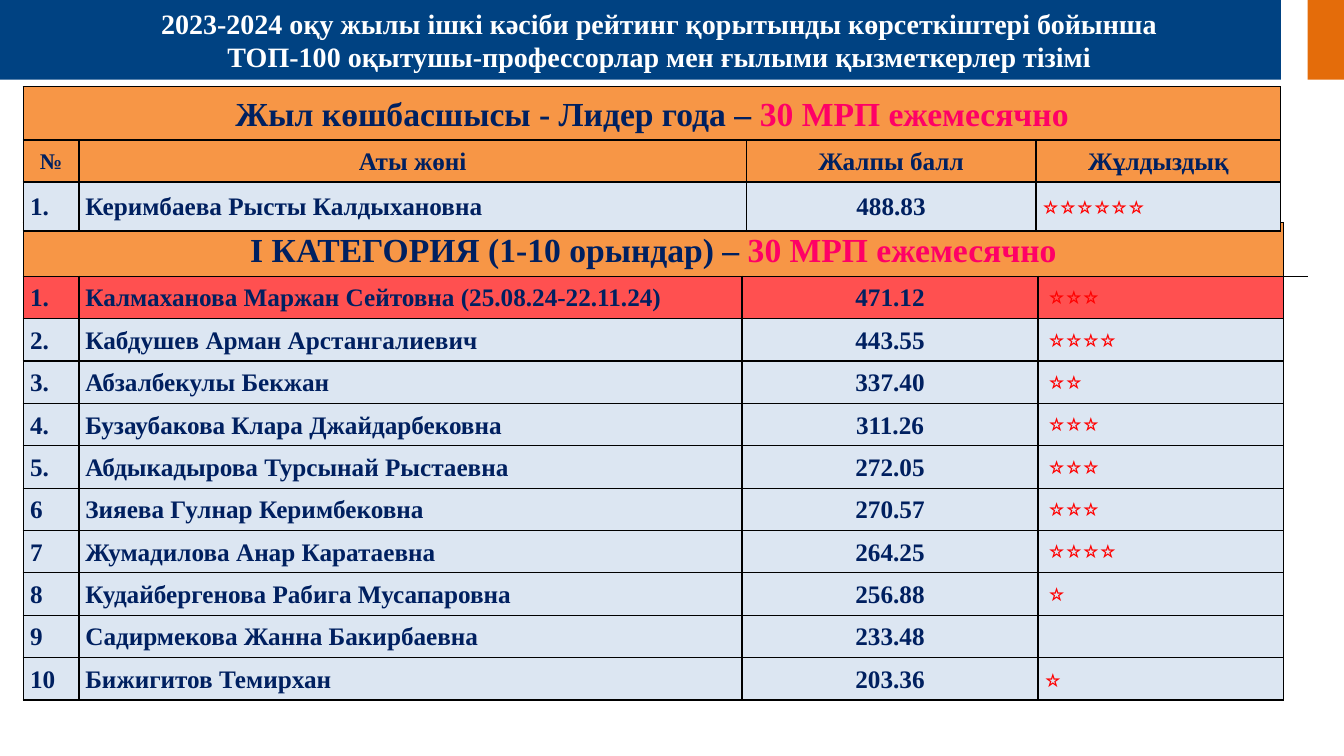
from lxml import etree
from pptx import Presentation
from pptx.dml.color import RGBColor
from pptx.enum.shapes import MSO_SHAPE
from pptx.enum.text import MSO_ANCHOR, MSO_AUTO_SIZE, PP_ALIGN
from pptx.oxml.ns import qn
from pptx.util import Pt

RECT = MSO_SHAPE.RECTANGLE
MID, TOP = MSO_ANCHOR.MIDDLE, MSO_ANCHOR.TOP
LEFT, MIDST = PP_ALIGN.LEFT, PP_ALIGN.CENTER
FIXED = MSO_AUTO_SIZE.NONE
FONT = "Times New Roman"
NAVY, PINK, RED, BLACK = "002060", "FF0066", "FF0000", "000000"
AMBER, PALE, CORAL = "F79646", "DCE6F2", "FF5050"
STAR = "⭐"

HEAD = ["2023-2024 оқу жылы ішкі кәсіби рейтинг қорытынды көрсеткіштері бойынша",
        "ТОП-100 оқытушы-профессорлар мен ғылыми қызметкерлер тізімі"]
LABELS = ["№", "Аты жөні", "Жалпы балл", "Жұлдыздық"]
LEADER = ("1.", "Керимбаева Рысты Калдыхановна", "488.83", 6)
PEOPLE = [
    ("1.", "Калмаханова Маржан Сейтовна (25.08.24-22.11.24)", "471.12", 3),
    ("2.", "Кабдушев Арман Арстангалиевич", "443.55", 4),
    ("3.", "Абзалбекулы Бекжан", "337.40", 2),
    ("4.", "Бузаубакова Клара Джайдарбековна", "311.26", 3),
    ("5.", "Абдыкадырова Турсынай Рыстаевна", "272.05", 3),
    ("6", "Зияева Гулнар Керимбековна", "270.57", 3),
    ("7", "Жумадилова Анар Каратаевна", "264.25", 4),
    ("8", "Кудайбергенова Рабига Мусапаровна", "256.88", 1),
    ("9", "Садирмекова Жанна Бакирбаевна", "233.48", 0),
    ("10", "Бижигитов Темирхан", "203.36", 1),
]


def color(code):
    return RGBColor.from_string(code)


def style(para, size, code, bold=True, align=MIDST):
    para.alignment = align
    font = para.font
    font.name, font.size, font.bold = FONT, Pt(size), bold
    font.color.rgb = color(code)


def border(cell, sides="LRTB"):
    """Draw the named sides in black and clear the others."""
    props = cell._tc.get_or_add_tcPr()
    for spot, side in enumerate("LRTB"):
        line = etree.Element(qn("a:ln" + side), w=str(Pt(0.96)))
        if side in sides:
            fill = etree.SubElement(line, qn("a:solidFill"))
            etree.SubElement(fill, qn("a:srgbClr"), val=BLACK)
        else:
            etree.SubElement(line, qn("a:noFill"))
        props.insert(spot, line)


def write(cell, text, back, size=18, code=NAVY, bold=True, align=MIDST,
          pad=4.5, anchor=MID):
    cell.fill.solid()
    cell.fill.fore_color.rgb = color(back)
    border(cell)
    cell.vertical_anchor = anchor
    cell.margin_left = cell.margin_right = Pt(pad)
    cell.margin_top = cell.margin_bottom = Pt(3.6)
    para = cell.text_frame.paragraphs[0]
    para.text = text
    para.line_spacing = 1.07
    style(para, size, code, bold, align)


def grid(slide, left, top, cols, rows):
    table = slide.shapes.add_table(len(rows), len(cols), Pt(left), Pt(top),
                                   Pt(sum(cols)), Pt(sum(rows))).table
    table.first_row = table.horz_banding = False
    for col, width in zip(table.columns, cols):
        col.width = Pt(width)
    for row, height in zip(table.rows, rows):
        row.height = Pt(height)
    return table


def banner(table, text, prize):
    """Merged heading over the first four columns."""
    for col in range(4):
        write(table.cell(0, col), "", AMBER, 24)
    cell = table.cell(0, 0)
    cell.merge(table.cell(0, 3))
    para = cell.text_frame.paragraphs[0]
    para.add_run().text = text
    run = para.add_run()
    run.text = prize
    run.font.color.rgb = color(PINK)


def person(table, row, data, back=PALE, pad=4.5, anchor=MID):
    rank, name, score, stars = data
    write(table.cell(row, 0), rank, back, align=LEFT, pad=5)
    write(table.cell(row, 1), name, back, align=LEFT)
    write(table.cell(row, 2), score, back)
    write(table.cell(row, 3), STAR * stars, back, code=RED, bold=False,
          align=LEFT, pad=pad, anchor=anchor)


def header(slide, left, top, width, height):
    # Colour bands
    for start, span, code in ((0, 915, "004282"), (934, width - 934, "E46C0A")):
        band = slide.shapes.add_shape(RECT, Pt(left + start), Pt(top),
                                      Pt(span), Pt(height))
        band.shadow.inherit = False
        band.fill.solid()
        band.fill.fore_color.rgb = color(code)
        band.line.fill.background()
    # Title, brought in front of the bands
    title = slide.shapes.title
    title._element.getparent().append(title._element)
    title.left, title.top = Pt(left + 34), Pt(top + 1.5)
    title.width, title.height = Pt(874), Pt(height - 2.5)
    frame = title.text_frame
    frame.word_wrap, frame.auto_size = True, FIXED
    frame.vertical_anchor = MID
    frame.text = "\n".join(HEAD)
    for para in frame.paragraphs:
        style(para, 20, "FFFFFF")


def ranking(slide, left, top):
    table = grid(slide, left, top, [40, 473.5, 211.5, 175.5, 16.5],
                 [38.3] + [30.3] * len(PEOPLE))
    banner(table, "І КАТЕГОРИЯ (1-10 орындар) – ", "30 МРП ежемесячно")
    last = len(PEOPLE)
    for row, data in enumerate(PEOPLE, 1):
        back = CORAL if row == 1 else PALE
        if row < last:
            person(table, row, data, back, 7.2, TOP)
        else:
            person(table, row, data, back)
    # Narrow empty column, with a rule under the heading only
    for row in range(last + 1):
        cell = table.cell(row, 4)
        cell.fill.background()
        border(cell, {0: "LB", 1: "LT"}.get(row, "L"))


def leader(slide, left, top):
    table = grid(slide, left, top, [40, 476.5, 207, 175], [38, 30, 35])
    banner(table, "Жыл көшбасшысы - Лидер года – ", "30 МРП ежемесячно")
    for col, label in enumerate(LABELS):
        write(table.cell(1, col), label, AMBER, 18 if col else 16, pad=5)
    person(table, 2, LEADER)


def main():
    deck = Presentation()
    deck.slide_width, deck.slide_height = Pt(960), Pt(540)
    slide = deck.slides.add_slide(deck.slide_layouts[5])
    header(slide, 0, -0.5, 960, 57.5)
    ranking(slide, 16.5, 159)
    leader(slide, 16.5, 62)
    deck.save("out.pptx")


if __name__ == "__main__":
    main()
